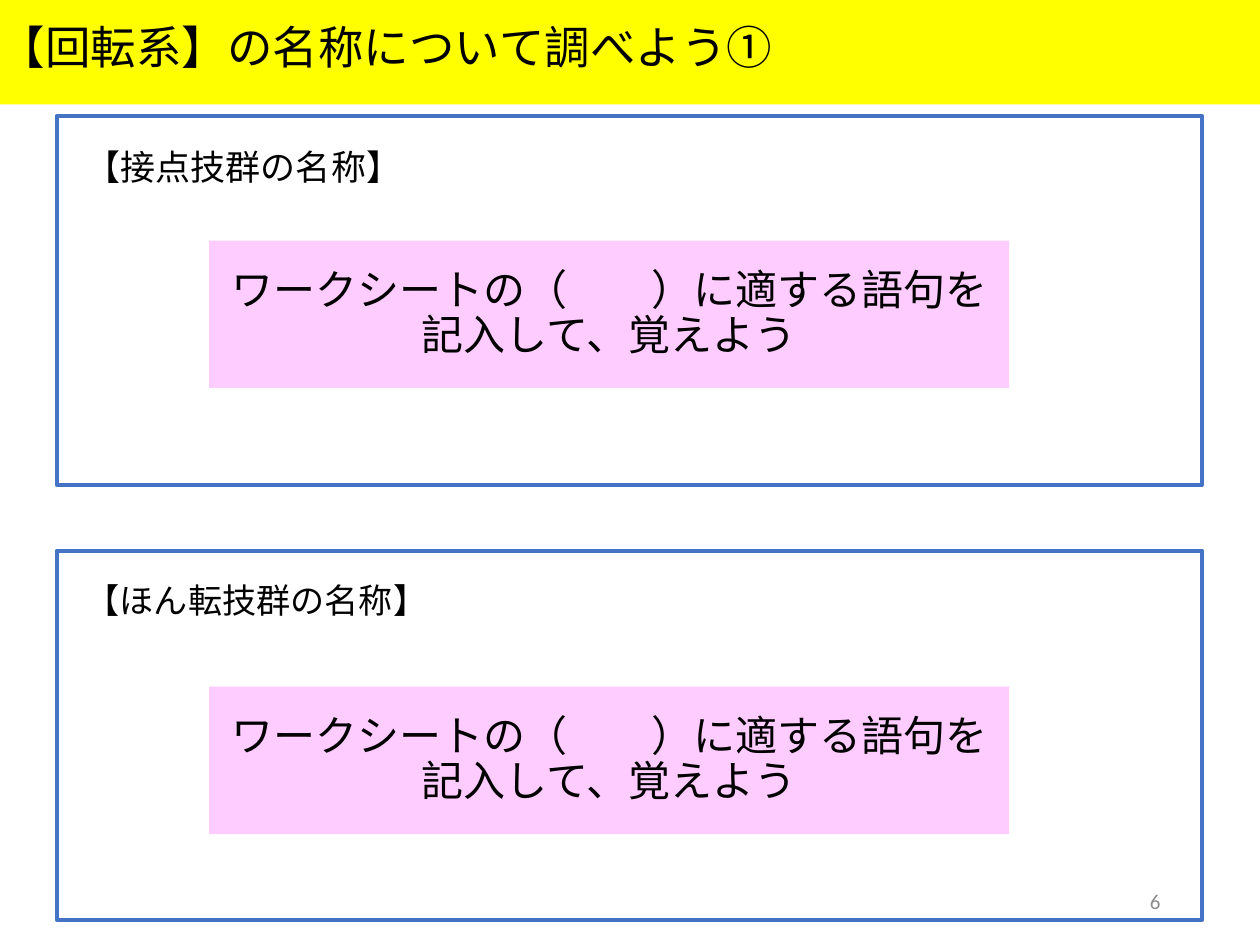
import pptx
import pptx.dml.color
import pptx.enum.shapes
import pptx.enum.text
import pptx.oxml
import pptx.oxml.ns
import pptx.util

Inches = pptx.util.Inches
ALIGN = pptx.enum.text.PP_ALIGN
JAPANESE = "Noto Sans CJK JP"
COLOURS = {
    "band": "FFFF00",
    "frame": "4472C4",
    "prompt": "FFCCFF",
    "text": "000000",
    "number": "8C8C8C",
}
PROMPT = "ワークシートの（　　）に適する語句を記入して、覚えよう"


def colour(name):
    return pptx.dml.color.RGBColor.from_string(COLOURS[name])


def place(shape, area):
    for side, length in zip(("left", "top", "width", "height"), area):
        setattr(shape, side, Inches(length))


def write(shape, text, size, align=ALIGN.LEFT, font=JAPANESE,
          ink="text", spacing=0.9):
    """Put one formatted paragraph into a shape."""
    frame = shape.text_frame
    frame_format = {
        "word_wrap": True,
        "auto_size": pptx.enum.text.MSO_AUTO_SIZE.NONE,
        "vertical_anchor": pptx.enum.text.MSO_ANCHOR.MIDDLE,
    }
    for name, value in frame_format.items():
        setattr(frame, name, value)
    para = frame.paragraphs[0]
    para_format = {"alignment": align, "line_spacing": spacing}
    for name, value in para_format.items():
        setattr(para, name, value)
    span = para.add_run()
    span.text = text
    span_format = {"size": pptx.util.Pt(size), "name": font}
    for name, value in span_format.items():
        setattr(span.font, name, value)
    span.font.color.rgb = colour(ink)
    # East Asian characters take their own typeface
    east_asian = pptx.oxml.parse_xml(
        f'<a:ea {pptx.oxml.ns.nsdecls("a")} typeface="{font}"/>')
    span.font._element.append(east_asian)


def add_label(page, area, text, size, **options):
    box = page.shapes.add_textbox(*map(Inches, area))
    write(box, text, size, **options)


def add_box(page, area, fill=None, line=None):
    box = page.shapes.add_shape(
        pptx.enum.shapes.MSO_SHAPE.RECTANGLE, *map(Inches, area))
    box.shadow.inherit = False
    if fill:
        box.fill.solid()
        box.fill.fore_color.rgb = colour(fill)
    else:
        box.fill.background()
    if line:
        box.line.color.rgb = colour(line)
        box.line.width = pptx.util.Pt(2.25)
    else:
        box.line.fill.background()
    return box


def main():
    deck = pptx.Presentation()
    deck.slide_width, deck.slide_height = Inches(10), Inches(7.5)
    page = deck.slides.add_slide(deck.slide_layouts[5])

    # Heading band
    add_box(page, (0, 0, 10.02, 0.83), fill="band")
    add_label(page, (-0.1, 0.19, 9.99, 0.41),
              "【回転系】の名称について調べよう①", 26)

    # Section frames
    for top in (0.92, 4.37):
        add_box(page, (0.45, top, 9.09, 2.93), line="frame")

    # Section names
    title = page.shapes.title
    place(title, (0.58, 1.14, 3.34, 0.41))
    write(title, "【接点技群の名称】", 20)
    add_label(page, (0.58, 4.58, 3.34, 0.41), "【ほん転技群の名称】", 19.5)

    # Worksheet prompts
    for top in (1.91, 5.45):
        prompt = add_box(page, (1.66, top, 6.35, 1.17), fill="prompt")
        write(prompt, PROMPT, 24, align=ALIGN.CENTER)

    # Page number
    add_label(page, (7.06, 6.95, 2.25, 0.4), "6", 12, align=ALIGN.RIGHT,
              font="Calibri", ink="number", spacing=1.0)

    deck.save("out.pptx")


if __name__ == "__main__":
    main()
